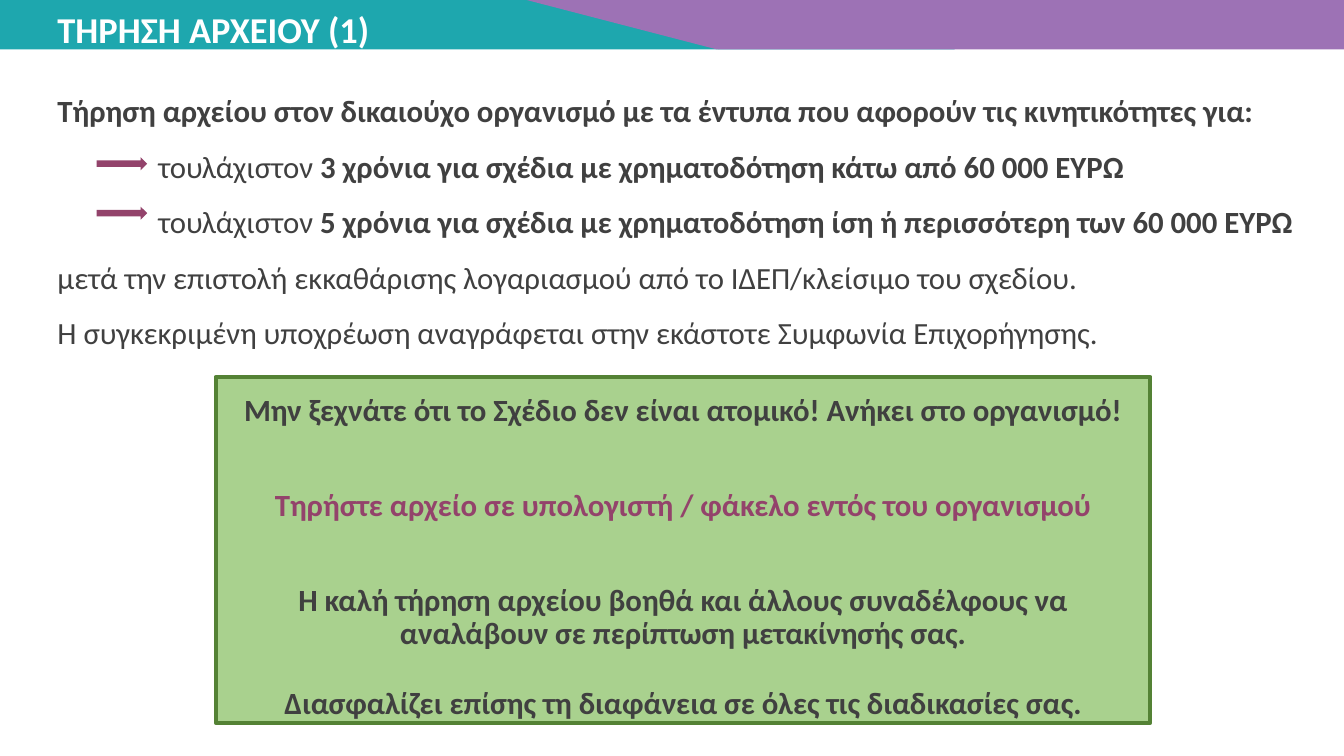
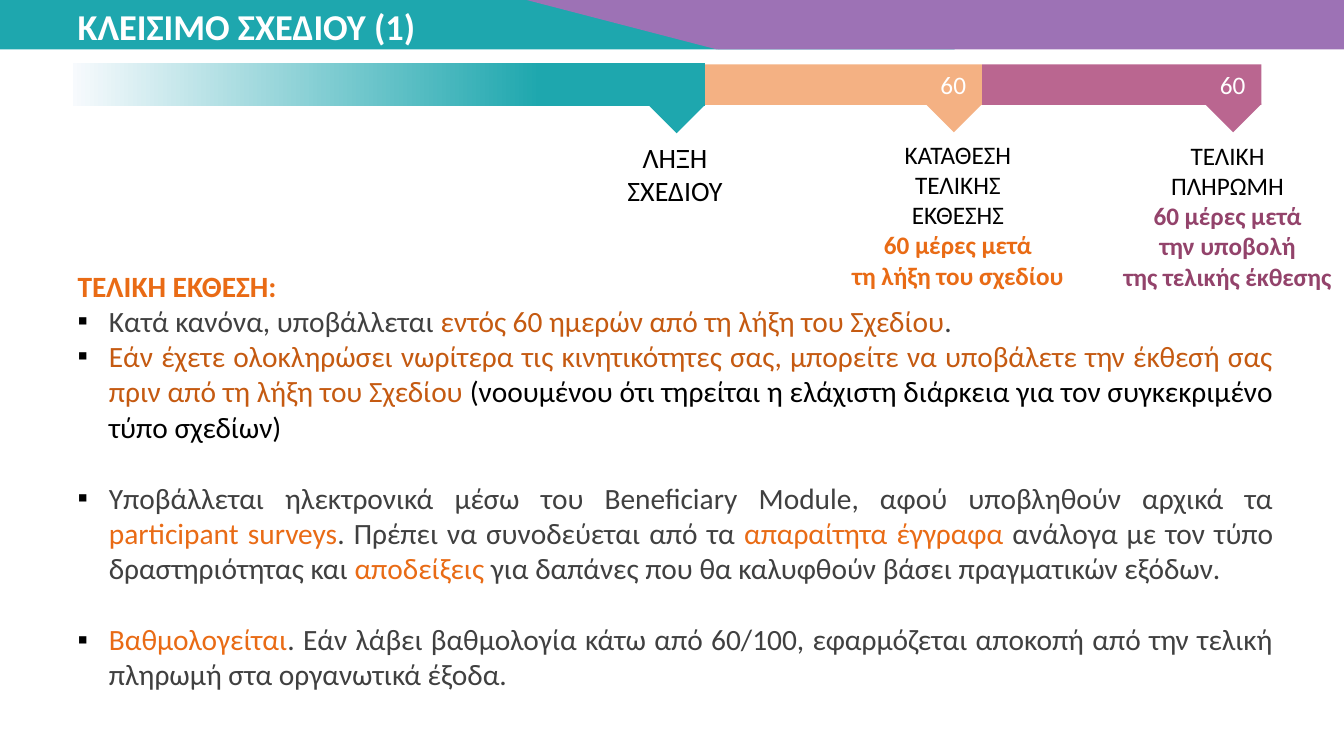
from dataclasses import dataclass

from lxml import etree
from pptx import Presentation
from pptx.dml.color import RGBColor
from pptx.enum.shapes import MSO_SHAPE
from pptx.enum.text import MSO_ANCHOR, MSO_AUTO_SIZE, PP_ALIGN
from pptx.oxml.ns import qn
from pptx.util import Inches, Pt

RECTANGLE = MSO_SHAPE.RECTANGLE
TRIANGLE = MSO_SHAPE.ISOSCELES_TRIANGLE
RIGHT_ARROW = MSO_SHAPE.RIGHT_ARROW
LEFT, CENTER, JUSTIFY = PP_ALIGN.LEFT, PP_ALIGN.CENTER, PP_ALIGN.JUSTIFY
TOP = MSO_ANCHOR.TOP
NO_AUTOFIT = MSO_AUTO_SIZE.NONE

SLIDE_WIDTH, SLIDE_HEIGHT = Inches(13.33), Inches(7.5)
COLUMN = SLIDE_WIDTH / 133.3
ROW = SLIDE_HEIGHT / 75

FONT = "Calibri"
TEAL, PURPLE, PLUM, ROSE = "1EA7AE", "9D72B5", "93436B", "BA6690"
ORANGE, RUST, PEACH = "E96B15", "C55A11", "F4B183"
GREEN, DARK_GREEN, PALE = "A9D18E", "548235", "F7FAFD"
GRAY, BLACK, WHITE = "404040", "000000", "FFFFFF"

BAR_TOP = 6.4
BAR_PITCH = 27.7
POINTER_SIZE = 4


@dataclass(frozen=True)
class Area:
    column: float
    row: float
    columns: float
    rows: float


@dataclass(frozen=True)
class Span:
    text: str
    color: str = GRAY
    bold: bool = False


@dataclass(frozen=True)
class Paragraph:
    spans: tuple[Span, ...]
    line_spacing: float = 1.0
    space_before: float = 0
    indent: float = 0
    bullet: str = ""


@dataclass(frozen=True)
class Milestone:
    bar: Area
    color: str
    days: str
    label: Area
    size: int
    name: tuple[str, ...]
    deadline: tuple[str, ...] = ()
    deadline_color: str = BLACK
    fade_from: str = ""


TITLE_BANDS = (
    (RECTANGLE, Area(0, -0.4, 94.7, 5.3), TEAL),
    (RECTANGLE, Area(71.2, -0.4, 62.1, 5.3), PURPLE),
    (TRIANGLE, Area(50.7, -0.4, 40, 5.3), PURPLE),
)

ARCHIVE_RULES = (
    Paragraph((Span("Τήρηση αρχείου στον δικαιούχο οργανισμό με τα έντυπα που αφορούν τις κινητικότητες για:", bold=True),), 1.5),
    Paragraph((Span("τουλάχιστον "), Span("3 χρόνια για σχέδια με χρηματοδότηση κάτω από 60 000 ΕΥΡΩ", bold=True)), 1.5, indent=1),
    Paragraph((Span("τουλάχιστον "), Span("5 χρόνια για σχέδια με χρηματοδότηση ίση ή περισσότερη των 60 000 ΕΥΡΩ", bold=True)), 1.5, indent=1),
    Paragraph((Span("μετά την επιστολή εκκαθάρισης λογαριασμού από το ΙΔΕΠ/κλείσιμο του σχεδίου."),), 1.5),
    Paragraph((Span("Η συγκεκριμένη υποχρέωση αναγράφεται στην εκάστοτε Συμφωνία Επιχορήγησης."),), 1.5),
)

REMINDERS = (
    Paragraph((Span("Μην ξεχνάτε ότι το Σχέδιο δεν είναι ατομικό! Ανήκει στο οργανισμό!", bold=True),), 0.9),
    Paragraph((Span("Τηρήστε αρχείο σε υπολογιστή / φάκελο εντός του οργανισμού", PLUM, True),), 0.9, 44),
    Paragraph((Span("Η καλή τήρηση αρχείου βοηθά και άλλους συναδέλφους να αναλάβουν σε περίπτωση μετακίνησής σας.", bold=True),), 0.9, 44),
    Paragraph((Span("Διασφαλίζει επίσης τη διαφάνεια σε όλες τις διαδικασίες σας.", bold=True),), 1.5, 10),
)


def bullet_item(*spans: Span, space_before: float = 0) -> Paragraph:
    return Paragraph(spans, space_before=space_before, indent=0.31, bullet="▪")


FINAL_REPORT = (
    Paragraph((Span("ΤΕΛΙΚΗ ΕΚΘΕΣΗ:", ORANGE, True),), 1.5),
    bullet_item(
        Span("Κατά κανόνα, υποβάλλεται "),
        Span("εντός 60 ημερών από τη λήξη του Σχεδίου", RUST),
        Span("."),
    ),
    bullet_item(
        Span("Εάν έχετε ολοκληρώσει νωρίτερα τις κινητικότητες σας, μπορείτε να υποβάλετε την έκθεσή σας πριν από τη λήξη του Σχεδίου ", RUST),
        Span("(νοουμένου ότι τηρείται η ελάχιστη διάρκεια για τον συγκεκριμένο τύπο σχεδίων)", BLACK),
    ),
    bullet_item(
        Span("Υποβάλλεται ηλεκτρονικά μέσω του Beneficiary Module, αφού υποβληθούν αρχικά τα "),
        Span("participant surveys", ORANGE),
        Span(". Πρέπει να συνοδεύεται από τα "),
        Span("απαραίτητα έγγραφα ", ORANGE),
        Span("ανάλογα με τον τύπο δραστηριότητας και "),
        Span("αποδείξεις ", ORANGE),
        Span("για δαπάνες που θα καλυφθούν βάσει πραγματικών εξόδων."),
        space_before=25.5,
    ),
    bullet_item(
        Span("Βαθμολογείται", ORANGE),
        Span(". Εάν λάβει βαθμολογία κάτω από 60/100, εφαρμόζεται αποκοπή από την τελική πληρωμή στα οργανωτικά έξοδα."),
        space_before=25.5,
    ),
)

MILESTONES = (
    Milestone(
        Area(7.2, BAR_TOP - 0.1, 62.7, 4.2), TEAL, "",
        Area(61.2, 13.4, 11.5, 7.7), 20, ("ΛΗΞΗ", "ΣΧΕΔΙΟΥ"), fade_from=PALE,
    ),
    Milestone(
        Area(69.7, BAR_TOP, BAR_PITCH, 4), PEACH, "60",
        Area(83.4, 13.3, 23.2, 16.2), 18, ("ΚΑΤΑΘΕΣΗ", "ΤΕΛΙΚΗΣ", "ΕΚΘΕΣΗΣ"),
        ("60 μέρες μετά", "τη λήξη του σχεδίου"), ORANGE,
    ),
    Milestone(
        Area(69.7 + BAR_PITCH, BAR_TOP, BAR_PITCH, 4), ROSE, "60",
        Area(110.3, 13.4, 22.9, 16.2), 18, ("ΤΕΛΙΚΗ", "ΠΛΗΡΩΜΗ"),
        ("60 μέρες μετά", "την υποβολή", "της τελικής έκθεσης"), PLUM,
    ),
)


def rgb(color: str) -> RGBColor:
    return RGBColor.from_string(color)


def place(box, area: Area) -> None:
    box.left, box.top = round(area.column * COLUMN), round(area.row * ROW)
    box.width, box.height = round(area.columns * COLUMN), round(area.rows * ROW)


def write_text(box, paragraphs: tuple[Paragraph, ...], *, size: float, align=LEFT, wrap: bool = True) -> None:
    frame = box.text_frame
    frame.word_wrap = wrap
    frame.auto_size = NO_AUTOFIT
    frame.vertical_anchor = TOP
    for index, paragraph in enumerate(paragraphs):
        para = frame.add_paragraph() if index else frame.paragraphs[0]
        para.alignment = align
        para.line_spacing = paragraph.line_spacing
        para.space_before = Pt(paragraph.space_before)
        para.space_after = Pt(0)
        properties = para._p.get_or_add_pPr()
        margin = Inches(paragraph.indent)
        properties.set("marL", str(margin))
        properties.set("indent", str(-margin if paragraph.bullet else 0))
        if paragraph.bullet:
            bullet_color = etree.SubElement(properties, qn("a:buClr"))
            etree.SubElement(bullet_color, qn("a:srgbClr"), val=BLACK)
            etree.SubElement(properties, qn("a:buChar"), char=paragraph.bullet)
        else:
            etree.SubElement(properties, qn("a:buNone"))
        for span in paragraph.spans:
            run = para.add_run()
            run.text = span.text
            run.font.name = FONT
            run.font.size = Pt(size)
            run.font.bold = span.bold
            run.font.color.rgb = rgb(span.color)


def add_box(page, kind, area: Area, fill: str, *, line: str = "", rotation: float = 0):
    box = page.shapes.add_shape(kind, 0, 0, 0, 0)
    place(box, area)
    box.shadow.inherit = False
    box.rotation = rotation
    box.fill.solid()
    box.fill.fore_color.rgb = rgb(fill)
    if line:
        box.line.color.rgb = rgb(line)
        box.line.width = Pt(3)
    else:
        box.line.fill.background()
    return box


def add_label(page, area: Area, paragraphs: tuple[Paragraph, ...], *, size: float, align=CENTER) -> None:
    box = page.shapes.add_textbox(0, 0, 0, 0)
    place(box, area)
    write_text(box, paragraphs, size=size, align=align, wrap=False)


def add_page(deck, title: str, title_area: Area, body: tuple[Paragraph, ...], body_area: Area, *, size: float, align=LEFT):
    page = deck.slides.add_slide(deck.slide_layouts[1])
    heading, content = page.placeholders
    for kind, area, color in TITLE_BANDS:
        band = add_box(page, kind, area, color)
        if kind == TRIANGLE:
            band.rotation = 180
            band.adjustments[0] = 0.49
        heading.element.addprevious(band.element)
    place(heading, title_area)
    write_text(heading, (Paragraph((Span(title, WHITE, True),)),), size=26)
    place(content, body_area)
    write_text(content, body, size=size, align=align)
    return page


def add_milestone(page, milestone: Milestone) -> None:
    bar = milestone.bar
    right, bottom = bar.column + bar.columns, bar.row + bar.rows
    box = add_box(page, RECTANGLE, bar, milestone.color)
    if milestone.fade_from:
        box.fill.gradient()
        box.fill.gradient_angle = 0
        start, end = box.fill.gradient_stops
        start.color.rgb, start.position = rgb(milestone.fade_from), 0
        end.color.rgb, end.position = rgb(milestone.color), 0.74
    pointer_area = Area(right - 4.8, bottom - 2.1, POINTER_SIZE, POINTER_SIZE)
    pointer = add_box(page, TRIANGLE, pointer_area, milestone.color, rotation=45)
    pointer.adjustments[0] = 1
    if milestone.days:
        days = (Paragraph((Span(milestone.days, WHITE),)),)
        add_label(page, Area(right - 5.1, BAR_TOP, 4.6, 4), days, size=18, align=LEFT)
    spans = [Span(text, BLACK) for text in milestone.name]
    spans += [Span(text, milestone.deadline_color, True) for text in milestone.deadline]
    add_label(page, milestone.label, tuple(Paragraph((span,)) for span in spans), size=milestone.size)


def build_archive_page(deck) -> None:
    page = add_page(
        deck, "ΤΗΡΗΣΗ ΑΡΧΕΙΟΥ (1)", Area(4.7, 0.2, 46, 5.4),
        ARCHIVE_RULES, Area(4.7, 6.8, 125.3, 28.8), size=22,
    )
    reminder = add_box(page, RECTANGLE, Area(21.4, 37.4, 92.7, 34.3), GREEN, line=DARK_GREEN)
    reminder.text_frame.margin_top = Inches(0.18)
    write_text(reminder, REMINDERS, size=22, align=CENTER)
    for index in range(2):
        add_box(page, RIGHT_ARROW, Area(9.6, 15.6 + 4.9 * index, 5, 1.3), PLUM)


def build_closing_page(deck) -> None:
    page = add_page(
        deck, "ΚΛΕΙΣΙΜΟ ΣΧΕΔΙΟΥ (1)", Area(6.7, -0.1, 46, 5.4),
        FINAL_REPORT, Area(6.7, 24.3, 120.6, 45.2), size=21, align=JUSTIFY,
    )
    for milestone in reversed(MILESTONES):
        add_milestone(page, milestone)


def main() -> None:
    deck = Presentation()
    deck.slide_width, deck.slide_height = SLIDE_WIDTH, SLIDE_HEIGHT
    build_archive_page(deck)
    build_closing_page(deck)
    deck.save("out.pptx")


if __name__ == "__main__":
    main()
